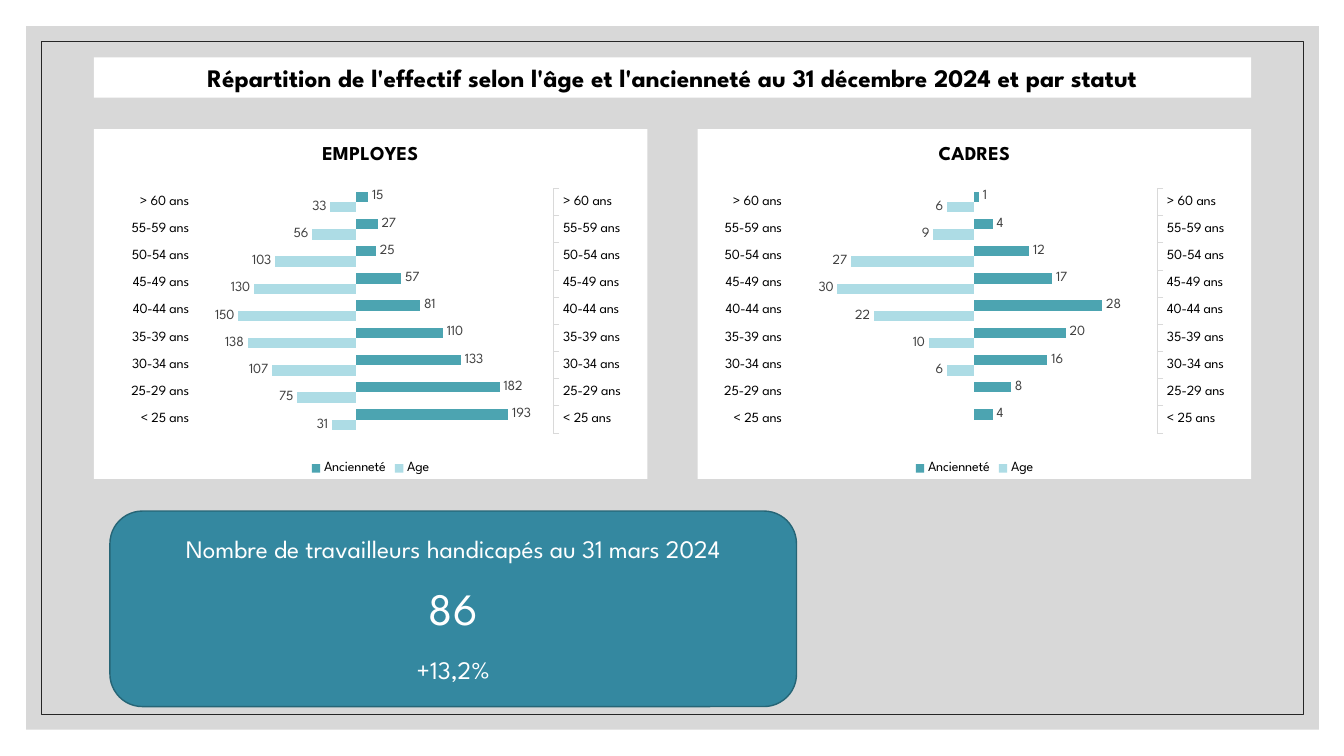
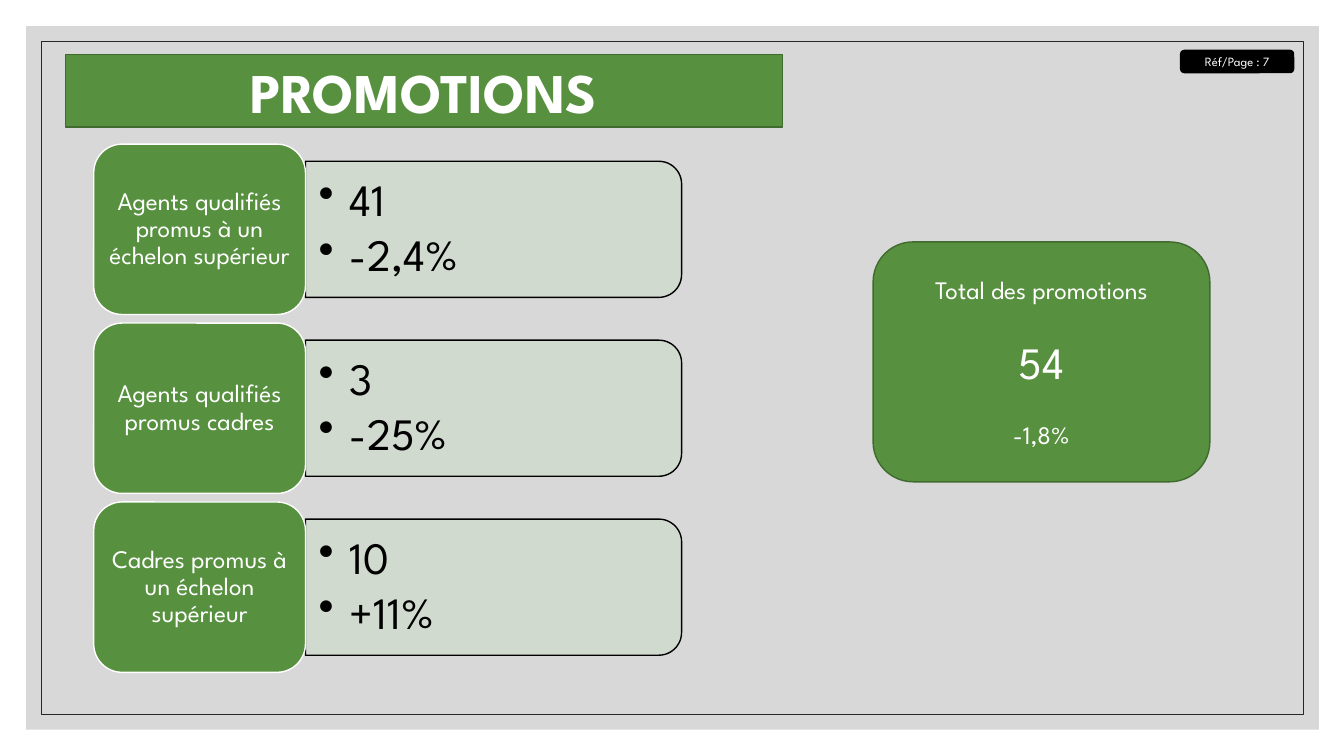
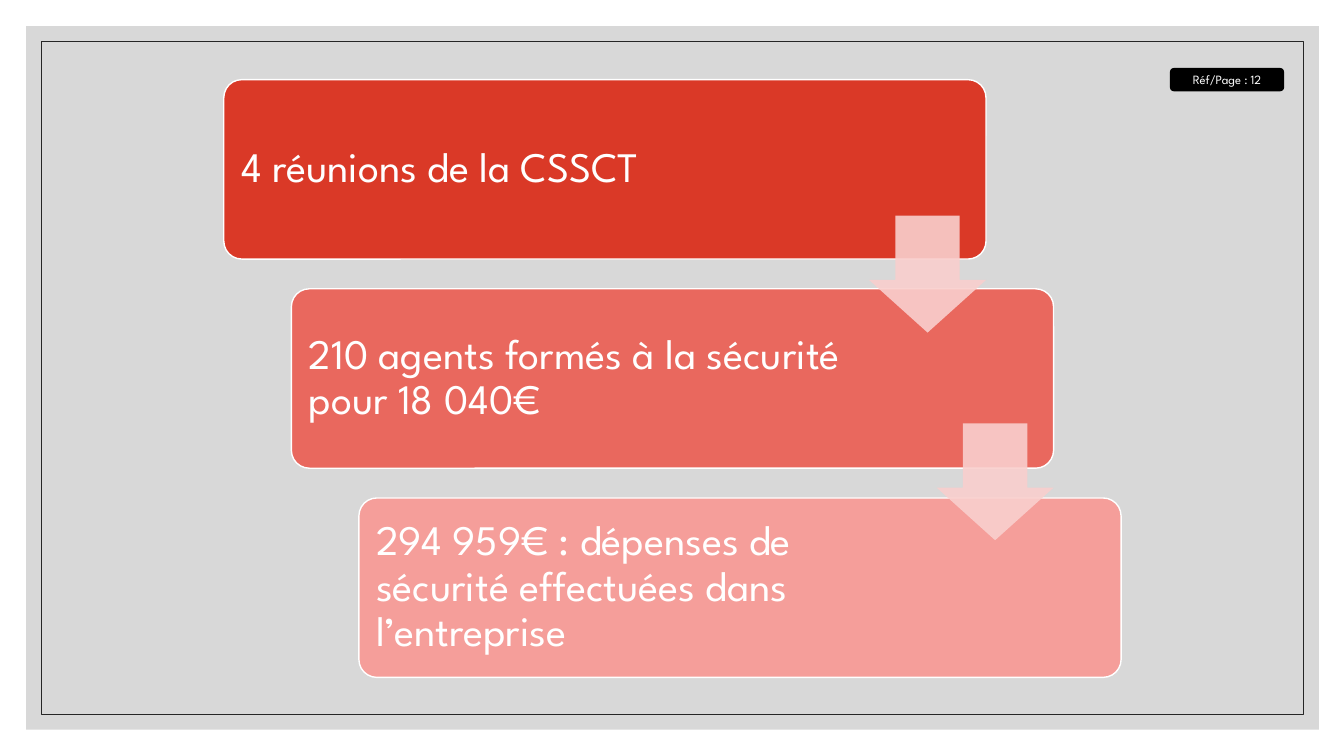
from copy import deepcopy

from lxml import etree
from pptx import Presentation
from pptx.chart.axis import CategoryAxis
from pptx.chart.data import CategoryChartData
from pptx.dml.color import RGBColor
from pptx.enum.chart import (XL_CHART_TYPE, XL_LABEL_POSITION, XL_LEGEND_POSITION,
                             XL_TICK_LABEL_POSITION as TICK_LABELS, XL_TICK_MARK)
from pptx.enum.shapes import MSO_SHAPE as SHAPE
from pptx.enum.text import MSO_ANCHOR as ANCHOR, PP_ALIGN as ALIGN
from pptx.oxml.ns import qn
from pptx.util import Inches, Pt

FONT = "League Spartan"
BLACK, WHITE = RGBColor(0, 0, 0), RGBColor(0xFF, 0xFF, 0xFF)
BACKDROP, FRAME = RGBColor(0xBF, 0xBF, 0xBF), RGBColor(0x26, 0x26, 0x26)
BLUE, BLUE_EDGE = RGBColor(0x34, 0x88, 0xA0), RGBColor(0x26, 0x65, 0x76)
GREEN, GREEN_EDGE = RGBColor(0x57, 0x90, 0x3F), RGBColor(0x40, 0x6B, 0x2F)
PALE_GREEN = RGBColor(0xD1, 0xDB, 0xCF)
REDS = [RGBColor(0xDA, 0x39, 0x27), RGBColor(0xE9, 0x68, 0x5E), RGBColor(0xF5, 0x9E, 0x9A)]
PINK = RGBColor(0xF9, 0xCF, 0xCD)
AGE, SENIORITY = RGBColor(0xAD, 0xDC, 0xE5), RGBColor(0x4C, 0xA4, 0xB1)
LABEL, AXIS = RGBColor(0x40, 0x40, 0x40), RGBColor(0xD9, 0xD9, 0xD9)

HEADCOUNT_TITLE = "Répartition de l'effectif selon l'âge et l'ancienneté au 31 décembre 2024 et par statut"
AGE_GROUPS = ["< 25 ans", "25-29 ans", "30-34 ans", "35-39 ans", "40-44 ans",
              "45-49 ans", "50-54 ans", "55-59 ans", "> 60 ans"]
PYRAMIDS = [
    {"title": "EMPLOYES", "range": (-200, 250), "plot": (0.19, 0.17, 0.64, 0.7),
     "Age": [-31, -75, -107, -138, -150, -130, -103, -56, -33],
     "Ancienneté": [193, 182, 133, 110, 81, 57, 25, 27, 15]},
    {"title": "CADRES", "range": (-40, 40), "plot": (0.17, 0.17, 0.66, 0.7),
     "Age": [None, None, -6, -10, -22, -30, -27, -9, -6],
     "Ancienneté": [4, 8, 16, 20, 28, 17, 12, 4, 1]},
]
DISABLED_WORKERS = ["Nombre de travailleurs handicapés au 31 mars 2024", "86", "+13,2%"]
PROMOTIONS = [
    ("Agents qualifiés promus à un échelon supérieur", ["41", "-2,4%"]),
    ("Agents qualifiés promus cadres", ["3", "-25%"]),
    ("Cadres promus à un échelon supérieur", ["10", "+11%"]),
]
PROMOTION_TOTAL = ["Total des promotions", "54", "-1,8%"]
SAFETY_STEPS = ["4 réunions de la CSSCT",
                "210 agents formés à la sécurité pour 18 040€",
                "294 959€ : dépenses de sécurité effectuées dans l’entreprise"]


def set_alpha(fill_parent, percent):
    for color in fill_parent.iter(qn("a:srgbClr")):
        etree.SubElement(color, qn("a:alpha")).set("val", str(percent * 1000))


def add_box(slide, kind, at, fill=None, edge=None, edge_width=1, alpha=None, adjust=()):
    box = slide.shapes.add_shape(kind, *map(Inches, at))
    box.shadow.inherit = False
    if fill is None:
        box.fill.background()
    else:
        box.fill.solid()
        box.fill.fore_color.rgb = fill
    if edge is None:
        box.line.fill.background()
    else:
        box.line.color.rgb = edge
        box.line.width = Pt(edge_width)
    for index, value in enumerate(adjust):
        box.adjustments[index] = value
    if alpha:
        set_alpha(box.fill._xPr if edge is None else box.element.spPr.find(qn("a:solidFill")), alpha)
    return box


def write(box, lines, sizes, color=WHITE, bold=False, align=ALIGN.CENTER, gaps=None,
          anchor=ANCHOR.MIDDLE, margins=(0.1, 0.05, 0.1, 0.05), spacing=None, bullet=False):
    """Fill a box with one paragraph per line; gaps are points above each line."""
    frame = box.text_frame
    frame.word_wrap = True
    frame.vertical_anchor = anchor
    for side, value in zip(("left", "top", "right", "bottom"), margins):
        setattr(frame, f"margin_{side}", Inches(value))
    for index, (line, size) in enumerate(zip(lines, sizes)):
        par = frame.paragraphs[0] if index == 0 else frame.add_paragraph()
        par.alignment = align
        if spacing:
            par.line_spacing = spacing
        if index and gaps:
            par.space_before = Pt(gaps[index - 1])
        if bullet:
            props = par._p.get_or_add_pPr()
            props.set("marL", str(Inches(0.31)))
            props.set("indent", str(-Inches(0.31)))
            etree.SubElement(props, qn("a:buChar")).set("char", "•")
        run = par.add_run()
        run.text = line
        for name, value in {"name": FONT, "size": Pt(size), "bold": bold}.items():
            setattr(run.font, name, value)
        run.font.color.rgb = color


def add_page_ref(slide, left, top, page):
    badge = add_box(slide, SHAPE.ROUNDED_RECTANGLE, (left, top, 1.12, 0.22), BLACK, BLACK)
    write(badge, [f"Réf/Page : {page}"], [9])


def add_key_figure(slide, at, lines, fill, edge, gaps):
    card = add_box(slide, SHAPE.ROUNDED_RECTANGLE, at, fill, edge)
    write(card, lines, (18, 32, 18), gaps=gaps)


def set_font(font, size, color=BLACK, bold=False):
    for name, value in {"name": FONT, "size": Pt(size), "bold": bold}.items():
        setattr(font, name, value)
    font.color.rgb = color


def set_plot_layout(plot_area, shares):
    for old in plot_area.findall(qn("c:layout")):
        plot_area.remove(old)
    layout = etree.Element(qn("c:layout"))
    manual = etree.SubElement(layout, qn("c:manualLayout"))
    values = [("layoutTarget", "inner"), ("xMode", "edge"), ("yMode", "edge"),
              *zip("xywh", shares)]
    for tag, value in values:
        etree.SubElement(manual, qn(f"c:{tag}")).set("val", str(value))
    plot_area.insert(0, layout)


def move_to_right_axis(plot_area):
    """Put the last series on second axes, with the category labels at the right."""
    left_bars = plot_area.find(qn("c:barChart"))
    right_bars = deepcopy(left_bars)
    left_bars.remove(left_bars.findall(qn("c:ser"))[-1])
    right_bars.remove(right_bars.find(qn("c:ser")))
    left_bars.addnext(right_bars)
    cat_axis, val_axis = (plot_area.find(qn(f"c:{tag}")) for tag in ("catAx", "valAx"))
    right_cat, right_val = deepcopy(cat_axis), deepcopy(val_axis)
    val_axis.addnext(right_val)
    right_val.addnext(right_cat)
    new_ids = {cat_axis.find(qn("c:axId")).get("val"): "50010",
               val_axis.find(qn("c:axId")).get("val"): "50020"}
    for part in (right_bars, right_cat, right_val):
        for tag in ("c:axId", "c:crossAx"):
            for ref in part.findall(qn(tag)):
                ref.set("val", new_ids[ref.get("val")])
    right_cat.find(qn("c:axPos")).set("val", "r")
    right_cat.find(qn("c:crosses")).set("val", "max")
    axis = CategoryAxis(right_cat)
    axis.tick_label_position = TICK_LABELS.NEXT_TO_AXIS
    axis.major_tick_mark = XL_TICK_MARK.OUTSIDE
    axis.format.line.color.rgb = AXIS
    axis.format.line.width = Pt(0.75)


def add_pyramid(slide, at, pyramid):
    data = CategoryChartData()
    data.categories = AGE_GROUPS
    for name in ("Age", "Ancienneté"):
        data.add_series(name, pyramid[name])
    chart = slide.shapes.add_chart(XL_CHART_TYPE.BAR_CLUSTERED, *map(Inches, at), data).chart
    set_font(chart.font, 10)
    chart.has_title = True
    heading = chart.chart_title.text_frame
    heading.text = pyramid["title"]
    set_font(heading.paragraphs[0].runs[0].font, 14, bold=True)
    chart.has_legend = True
    chart.legend.position = XL_LEGEND_POSITION.BOTTOM
    chart.legend.include_in_layout = False
    set_font(chart.legend.font, 10)

    ages, counts = chart.category_axis, chart.value_axis
    ages.tick_label_position = TICK_LABELS.LOW
    ages.major_tick_mark = XL_TICK_MARK.NONE
    ages.format.line.fill.background()
    set_font(ages.tick_labels.font, 10)
    counts.minimum_scale, counts.maximum_scale = pyramid["range"]
    counts.has_major_gridlines = False
    counts.visible = False

    plot = chart.plots[0]
    plot.gap_width = 60
    plot.vary_by_categories = False
    for series, color in zip(plot.series, (AGE, SENIORITY)):
        series.invert_if_negative = False
        series.format.fill.solid()
        series.format.fill.fore_color.rgb = color
        labels = series.data_labels
        for name, value in {"show_value": True, "number_format": "General;General",
                            "number_format_is_linked": False,
                            "position": XL_LABEL_POSITION.OUTSIDE_END}.items():
            setattr(labels, name, value)
        set_font(labels.font, 10, LABEL)

    space = chart.element
    plot_area = space.find(f".//{qn('c:plotArea')}")
    set_plot_layout(plot_area, pyramid["plot"])
    move_to_right_axis(plot_area)
    props = etree.Element(qn("c:spPr"))
    solid = etree.SubElement(props, qn("a:solidFill"))
    etree.SubElement(solid, qn("a:srgbClr")).set("val", str(WHITE))
    etree.SubElement(etree.SubElement(props, qn("a:ln")), qn("a:noFill"))
    space.find(qn("c:txPr")).addprevious(props)


def draw_backdrop(slide, layout):
    """Draw the grey sheet and its frame, then hand them to the layout."""
    tree = layout.shapes.element
    for holder in list(layout.placeholders):
        tree.remove(holder.element)
    sheet = add_box(slide, SHAPE.RECTANGLE, (0.26, 0.26, 12.82, 6.98), BACKDROP, alpha=60)
    frame = add_box(slide, SHAPE.RECTANGLE, (0.41, 0.41, 12.52, 6.68), edge=FRAME, edge_width=0.5)
    for part in (sheet, frame):
        tree.append(part.element)


def build_headcount(slide):
    left, width, chart_width = 0.93, 11.48, 5.49
    add_key_figure(slide, (1.09, 5.07, 6.81, 1.94), DISABLED_WORKERS, BLUE, BLUE_EDGE, (12, 14))
    title = add_box(slide, SHAPE.RECTANGLE, (left, 0.57, width, 0.4), WHITE)
    write(title, [HEADCOUNT_TITLE], [18], BLACK, bold=True, anchor=ANCHOR.TOP)
    for column, pyramid in enumerate(PYRAMIDS):
        x = left + column * (width - chart_width)
        add_pyramid(slide, (x, 1.28, chart_width, 3.47), pyramid)


def build_promotions(slide):
    left, top, label_width, label_height, pitch = 0.93, 1.43, 2.1, 1.69, 1.775
    bar_width, bar_height = 3.73, 1.35
    for row, (label, figures) in enumerate(PROMOTIONS):
        y = top + row * pitch
        middle, x = y + label_height / 2, left + label_width
        bar = add_box(slide, SHAPE.ROUND_2_SAME_RECTANGLE,
                      (x + (bar_width - bar_height) / 2, middle - bar_width / 2,
                       bar_height, bar_width), PALE_GREEN, BLACK, alpha=90)
        bar.rotation = 90
        values = slide.shapes.add_textbox(*map(Inches, (x, middle - 0.61, 3.67, 1.22)))
        write(values, figures, (32, 32), BLACK, align=ALIGN.LEFT, gaps=[5],
              margins=(0.13, 0.07, 0.13, 0.07), spacing=0.9, bullet=True)
        tile = add_box(slide, SHAPE.ROUNDED_RECTANGLE,
                       (left, y, label_width, label_height), GREEN, WHITE)
        write(tile, [label], [18], margins=(0.07, 0.04, 0.07, 0.04), spacing=0.9)
    add_key_figure(slide, (8.66, 2.4, 3.34, 2.38), PROMOTION_TOTAL, GREEN, GREEN_EDGE, (22, 22))
    add_page_ref(slide, 11.71, 0.5, 7)
    title = add_box(slide, SHAPE.RECTANGLE, (0.65, 0.54, 7.11, 0.72), GREEN, GREEN_EDGE)
    write(title, ["PROMOTIONS"], [40], bold=True)


def build_safety(slide):
    left, top, width, height = 2.22, 0.79, 7.56, 1.78
    shift, drop, arrow = 0.67, 2.075, 1.16
    for step, (text, color) in enumerate(zip(SAFETY_STEPS, REDS)):
        card = add_box(slide, SHAPE.ROUNDED_RECTANGLE,
                       (left + step * shift, top + step * drop, width, height),
                       color, WHITE, adjust=[0.1])
        write(card, [text], [30], align=ALIGN.LEFT,
              margins=(0.12, 0.12, 1.93, 0.12), spacing=0.9)
    for step in range(len(SAFETY_STEPS) - 1):
        pointer = add_box(slide, SHAPE.DOWN_ARROW,
                          (left + width - arrow + step * shift, 2.14 + step * 2.06, arrow, arrow),
                          PINK, alpha=90, adjust=[0.55, 0.45])
        # The head is shorter than the shaft, which is 55 % of the width.
        pointer.line.fill.background()
    add_page_ref(slide, 11.61, 0.68, 12)


def main():
    deck = Presentation()
    deck.slide_width, deck.slide_height = Inches(13.33), Inches(7.5)
    blank = deck.slide_layouts[6]
    for number, build in enumerate((build_headcount, build_promotions, build_safety)):
        slide = deck.slides.add_slide(blank)
        if number == 0:
            draw_backdrop(slide, blank)
        build(slide)
    deck.save("out.pptx")


if __name__ == "__main__":
    main()
